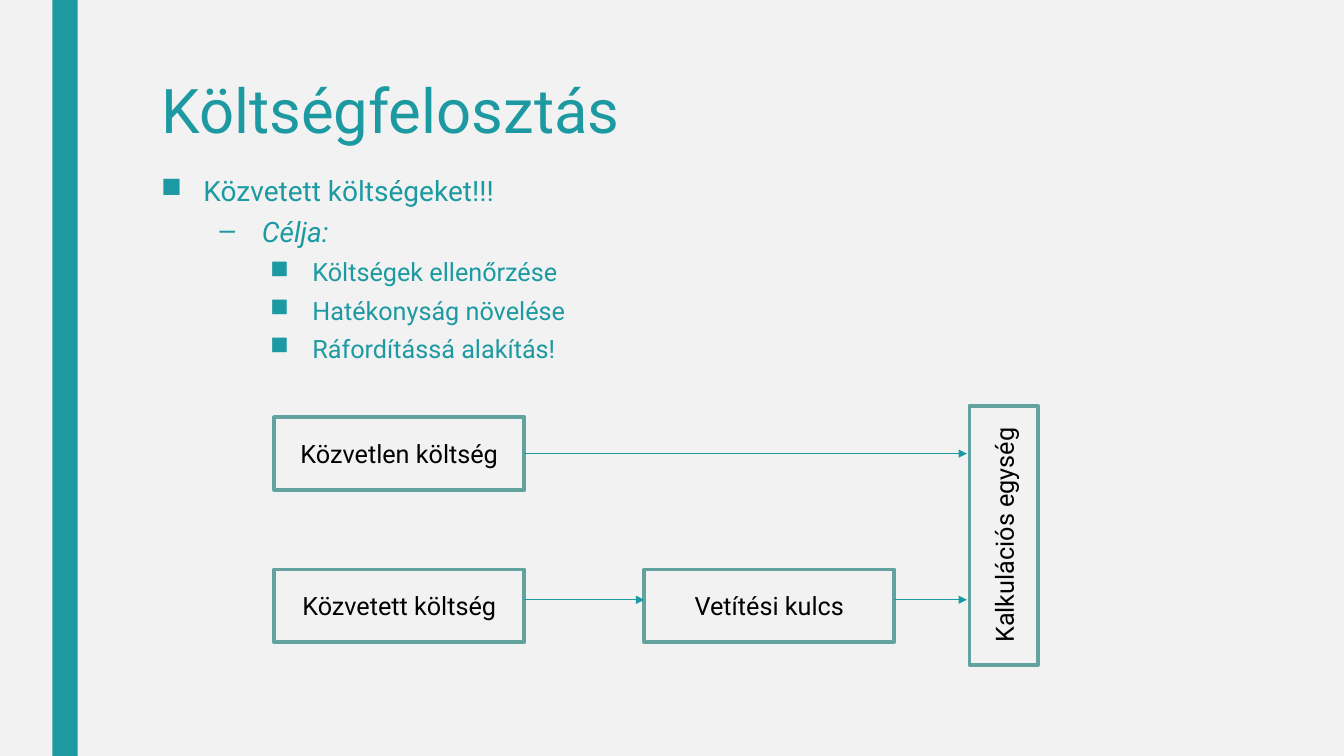
from lxml.etree import SubElement
from pptx import Presentation
from pptx.dml.color import RGBColor
from pptx.enum.shapes import MSO_CONNECTOR, MSO_SHAPE
from pptx.enum.text import MSO_ANCHOR, PP_ALIGN
from pptx.oxml.ns import qn
from pptx.util import Inches, Pt

COLORS = {"bg": "F2F2F2", "teal": "1D9AA1", "border": "62A39F", "text": "000000"}
BOX_W, BOX_H = 2.48, 0.72
LEFT_X, KEY_X, UNIT_X = 2.72, 6.39, 9.59
DIRECT_Y, INDIRECT_Y = 4.14, 5.65
DIRECT_ARROW_Y, INDIRECT_ARROW_Y = 4.5, 5.95

# Per outline level: bullet, left indent, space before
LEVELS = [("■", 0.42, 10), ("–", 1, 5), ("■", 1.5, 5)]
OUTLINE = [
    (0, "Közvetett költségeket!!!", 20, False),
    (1, "Célja:", 20, True),
    (2, "Költségek ellenőrzése", 18, False),
    (2, "Hatékonyság növelése", 18, False),
    (2, "Ráfordítássá alakítás!", 18, False),
]


class SlideBuilder:
    font = "Roboto"

    def __init__(self, slide):
        self.s = slide
        fill = slide.background.fill
        fill.solid()
        fill.fore_color.rgb = self.rgb("bg")

    def rgb(self, name):
        return RGBColor.from_string(COLORS[name])

    def run(self, p, text, size, color, italic=False):
        r = p.add_run()
        r.text = text
        r.font.name = self.font
        r.font.size = Pt(size)
        r.font.italic = italic
        r.font.color.rgb = self.rgb(color)

    def rect(self, x, y, w, h):
        sp = self.s.shapes.add_shape(
            MSO_SHAPE.RECTANGLE, Inches(x), Inches(y), Inches(w), Inches(h))
        sp.shadow.inherit = False
        return sp

    def bar(self, x, y, w, h):
        sp = self.rect(x, y, w, h)
        sp.fill.solid()
        sp.fill.fore_color.rgb = self.rgb("teal")
        sp.line.fill.background()

    def box(self, text, x, y, w=BOX_W, h=BOX_H, rotation=0):
        sp = self.rect(x, y, w, h)
        sp.rotation = rotation
        sp.fill.background()
        sp.line.color.rgb = self.rgb("border")
        sp.line.width = Pt(2.75)
        tf = sp.text_frame
        tf.vertical_anchor = MSO_ANCHOR.MIDDLE
        p = tf.paragraphs[0]
        p.alignment = PP_ALIGN.CENTER
        self.run(p, text, 18, "text")

    def text_frame(self, x, y, w, h):
        tf = self.s.shapes.add_textbox(
            Inches(x), Inches(y), Inches(w), Inches(h)).text_frame
        tf.word_wrap = True
        return tf

    def title(self, text, x, y, w, h):
        p = self.text_frame(x, y, w, h).paragraphs[0]
        p.line_spacing = 0.89
        self.run(p, text, 44, "teal")

    def outline(self, items, x, y, w, h):
        tf = self.text_frame(x, y, w, h)
        for i, (level, text, size, italic) in enumerate(items):
            p = tf.add_paragraph() if i else tf.paragraphs[0]
            bullet, indent, before = LEVELS[level]
            p.level = level
            p.line_spacing = 0.94
            p.space_before = Pt(before)
            p.space_after = Pt(2)
            pPr = p._p.get_or_add_pPr()
            pPr.set("marL", str(Inches(indent)))
            pPr.set("indent", str(Inches(-0.42)))
            SubElement(pPr, qn("a:buChar"), char=bullet)
            self.run(p, text, size, "teal", italic)

    def arrow(self, x1, x2, y):
        c = self.s.shapes.add_connector(
            MSO_CONNECTOR.STRAIGHT, Inches(x1), Inches(y), Inches(x2), Inches(y))
        c.line.color.rgb = self.rgb("teal")
        c.line.width = Pt(0.5)
        SubElement(c.line._get_or_add_ln(), qn("a:tailEnd"), type="triangle")
        SubElement(c._element.spPr, qn("a:effectLst"))


def main():
    prs = Presentation()
    prs.slide_width, prs.slide_height = Inches(13.33), Inches(7.5)
    b = SlideBuilder(prs.slides.add_slide(prs.slide_layouts[6]))

    b.bar(0.52, 0, 0.25, 7.5)
    b.title("Költségfelosztás", 1.5, 0.75, 10.5, 1.62)
    b.outline(OUTLINE, 1.5, 1.7, 10.5, 2.07)

    b.box("Közvetlen költség", LEFT_X, DIRECT_Y)
    b.box("Közvetett költség", LEFT_X, INDIRECT_Y)
    b.box("Vetítési kulcs", KEY_X, INDIRECT_Y)
    b.box("Kalkulációs egység", 8.67, 4.97, 2.57, 0.68, rotation=270)

    b.arrow(LEFT_X + BOX_W, UNIT_X, DIRECT_ARROW_Y)
    b.arrow(LEFT_X + BOX_W, KEY_X, INDIRECT_ARROW_Y)
    b.arrow(KEY_X + BOX_W, UNIT_X, INDIRECT_ARROW_Y)

    prs.save("out.pptx")


if __name__ == "__main__":
    main()
